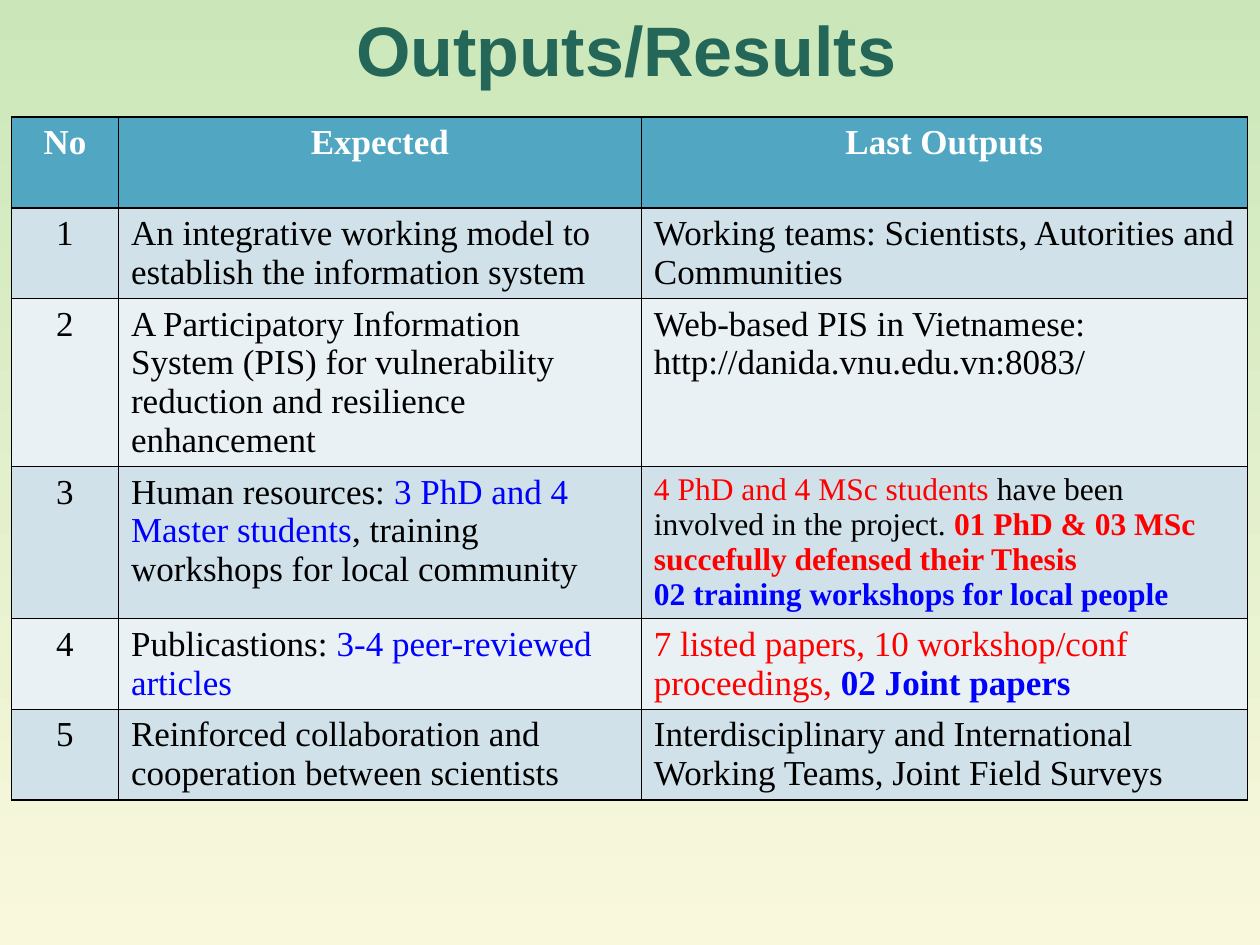
from dataclasses import dataclass

from lxml.etree import SubElement
from pptx import Presentation
from pptx.dml.color import RGBColor
from pptx.enum.text import MSO_ANCHOR, MSO_AUTO_SIZE, PP_ALIGN
from pptx.oxml.ns import qn
from pptx.util import Inches, Pt


@dataclass(frozen=True)
class Theme:
    bg_top: str = "CBE7B9"
    bg_bottom: str = "F9F8DD"
    title: str = "246657"
    header: str = "51A6C2"
    bands: tuple = ("D0E1E9", "E9F1F4")
    white: str = "FFFFFF"
    black: str = "000000"
    blue: str = "0000FF"
    red: str = "FF0000"
    title_font: str = "Arial"
    body_font: str = "Times New Roman"
    title_size: int = 40
    body_size: int = 20
    small_size: int = 18
    border: float = 1


THEME = Theme()
BLUE, RED = THEME.blue, THEME.red
COL_WIDTHS = (0.85, 4.15, 4.81)
HEADERS = ("No", "Expected", "Last Outputs")
SMALL_ROW = 3

ROWS = [
    ([["An integrative working model to establish the information system"]],
     [["Working teams: Scientists, Autorities and Communities"]]),
    ([["A Participatory Information System (PIS) for vulnerability reduction "
       "and resilience enhancement"]],
     [["Web-based PIS in Vietnamese:"], ["http://danida.vnu.edu.vn:8083/"]]),
    ([["Human resources: ", ("3 PhD and 4 Master students", BLUE, False),
       ", training workshops for local community"]],
     [[("4 PhD and 4 MSc students", RED, False),
       " have been involved in the project. ",
       ("01 PhD & 03 MSc succefully defensed their Thesis", RED, True)],
      [("02 training workshops for local people", BLUE, True)]]),
    ([["Publicastions: ", ("3-4 peer-reviewed articles", BLUE, False)]],
     [[("7 listed papers, 10 workshop/conf proceedings, ", RED, False),
       ("02 Joint papers", BLUE, True)]]),
    ([["Reinforced collaboration and cooperation between scientists"]],
     [["Interdisciplinary and International Working Teams, Joint Field Surveys"]]),
]


def add_run(p, text, font, size, color, bold):
    r = p.add_run()
    r.text = text
    r.font.name = font
    r.font.size = Pt(size)
    r.font.bold = bold
    r.font.color.rgb = RGBColor.from_string(color)


def paint_background(s):
    fill = s.background.fill
    fill.gradient()
    fill.gradient_angle = 270
    for stop, color in zip(fill.gradient_stops, (THEME.bg_top, THEME.bg_bottom)):
        stop.color.rgb = RGBColor.from_string(color)


def place_title(s, text, left, top, width, height):
    sp = s.shapes.title
    sp.left, sp.top, sp.width, sp.height = left, top, width, height
    tf = sp.text_frame
    tf.auto_size = MSO_AUTO_SIZE.NONE
    tf.vertical_anchor = MSO_ANCHOR.MIDDLE
    p = tf.paragraphs[0]
    p.alignment = PP_ALIGN.CENTER
    p.line_spacing = 0.95
    add_run(p, text, THEME.title_font, THEME.title_size, THEME.title, True)


def add_borders(cell):
    tc_pr = cell._tc.get_or_add_tcPr()
    for i, side in enumerate(("a:lnL", "a:lnR", "a:lnT", "a:lnB")):
        ln = tc_pr.makeelement(qn(side), {"w": str(Pt(THEME.border))})
        fill = SubElement(ln, qn("a:solidFill"))
        SubElement(fill, qn("a:srgbClr"), val=THEME.black)
        tc_pr.insert(i, ln)


def fill_cell(cell, paragraphs, fill, color, size, bold=False, centered=False):
    cell.fill.solid()
    cell.fill.fore_color.rgb = RGBColor.from_string(fill)
    add_borders(cell)
    tf = cell.text_frame
    for i, runs in enumerate(paragraphs):
        p = tf.add_paragraph() if i else tf.paragraphs[0]
        p.alignment = PP_ALIGN.CENTER if centered else PP_ALIGN.LEFT
        for run in runs:
            text, run_color, run_bold = (run, color, bold) if isinstance(run, str) else run
            add_run(p, text, THEME.body_font, size, run_color, run_bold)


def place_table(s, left, top, width, height):
    frame = s.shapes.add_table(len(ROWS) + 1, len(HEADERS), left, top, width, height)
    table = frame.table
    for column, share in zip(table.columns, COL_WIDTHS):
        column.width = int(width * share / sum(COL_WIDTHS))
    for c, text in enumerate(HEADERS):
        fill_cell(table.cell(0, c), [[text]], THEME.header, THEME.white,
                  THEME.body_size, bold=True, centered=True)
    for n, (expected, outputs) in enumerate(ROWS, 1):
        band = THEME.bands[(n - 1) % 2]
        output_size = THEME.small_size if n == SMALL_ROW else THEME.body_size
        fill_cell(table.cell(n, 0), [[str(n)]], band, THEME.black,
                  THEME.body_size, centered=True)
        fill_cell(table.cell(n, 1), expected, band, THEME.black, THEME.body_size)
        fill_cell(table.cell(n, 2), outputs, band, THEME.black, output_size)


def main():
    prs = Presentation()
    prs.slide_width, prs.slide_height = Inches(10), Inches(7.5)
    s = prs.slides.add_slide(prs.slide_layouts[5])
    paint_background(s)
    place_title(s, "Outputs/Results", Inches(0.17), Inches(0.02), Inches(9.6), Inches(0.79))
    place_table(s, Inches(0.09), Inches(0.93), Inches(9.81), Inches(4.32))
    prs.save("out.pptx")


if __name__ == "__main__":
    main()
